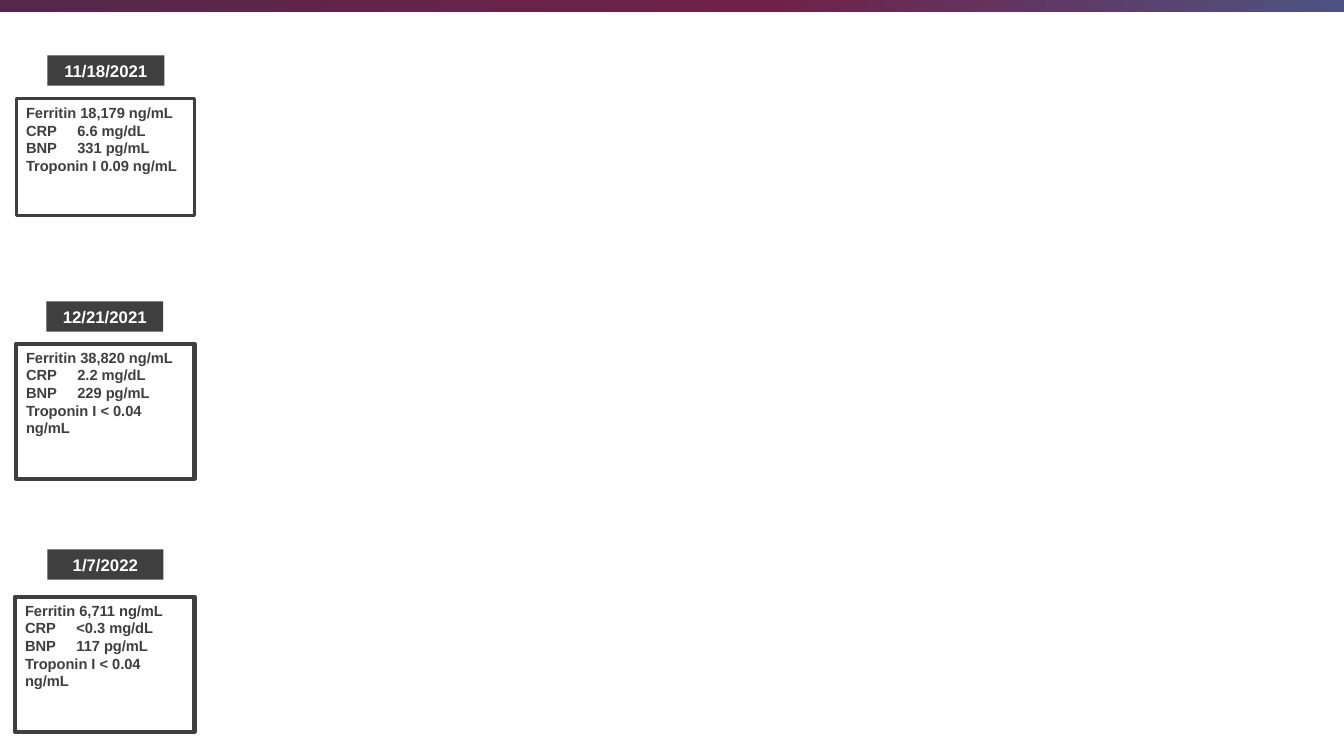
from copy import deepcopy
from dataclasses import dataclass

from lxml.etree import SubElement
from pptx import Presentation
from pptx.dml.color import RGBColor
from pptx.enum.shapes import MSO_SHAPE as SHAPE
from pptx.enum.text import MSO_ANCHOR as ANCHOR, PP_ALIGN as ALIGN
from pptx.oxml import parse_xml
from pptx.oxml.ns import nsdecls, qn
from pptx.shapes.autoshape import Shape
from pptx.slide import Slide
from pptx.util import Emu, Pt

PX = 9144  # 100 px to the inch
FONT = "Arial"
DARK = "3F3F3F"
WHITE = "FFFFFF"
BAND_STOPS = [(0, "54284B"), (57, "6F2147"), (100, "4D5282")]
VALUE_TAB = 51


@dataclass
class Box:
    left: int
    top: int
    width: int
    height: int


@dataclass
class LabPanel:
    date: str
    date_box: Box
    results: list[str]
    results_box: Box
    border: float


PANELS = [
    LabPanel("11/18/2021", Box(47, 55, 116, 30),
             ["Ferritin 18,179 ng/mL", "CRP\t6.6 mg/dL", "BNP\t331 pg/mL",
              "Troponin I 0.09 ng/mL"],
             Box(16, 98, 177, 116), 2.25),
    LabPanel("12/21/2021", Box(46, 299, 116, 30),
             ["Ferritin 38,820 ng/mL", "CRP\t2.2 mg/dL", "BNP\t229 pg/mL",
              "Troponin I < 0.04 ng/mL"],
             Box(16, 341, 177, 134), 3),
    LabPanel("1/7/2022", Box(47, 545, 115, 30),
             ["Ferritin 6,711 ng/mL", "CRP\t<0.3 mg/dL", "BNP\t117 pg/mL",
              "Troponin I < 0.04 ng/mL"],
             Box(15, 592, 178, 134), 3),
]


def px(n: int) -> Emu:
    return Emu(n * PX)


def rgb(color: str) -> RGBColor:
    return RGBColor.from_string(color)


def add_rect(s: Slide, box: Box) -> Shape:
    sp = s.shapes.add_shape(SHAPE.RECTANGLE, px(box.left), px(box.top),
                            px(box.width), px(box.height))
    sp.shadow.inherit = False
    sp.line.fill.background()
    return sp


def write(sp: Shape, lines: list[str], size: float, color: str,
          align: ALIGN) -> None:
    tf = sp.text_frame
    tf.word_wrap = True
    tf.vertical_anchor = ANCHOR.TOP
    for i, line in enumerate(lines):
        p = tf.add_paragraph() if i else tf.paragraphs[0]
        p.text = line
        p.alignment = align
        p.font.name = FONT
        p.font.size = Pt(size)
        p.font.bold = True
        p.font.color.rgb = rgb(color)
        # The tab stop lines up the values
        if "\t" in line:
            p._p.get_or_add_pPr().insert(0, parse_xml(
                f'<a:tabLst {nsdecls("a")}>'
                f'<a:tab pos="{px(VALUE_TAB)}" algn="l"/></a:tabLst>'))


def add_band(s: Slide, box: Box) -> None:
    sp = add_rect(s, box)
    sp.fill.gradient()
    sp.fill.gradient_angle = 0
    stops = sp.fill.gradient_stops
    stops[0]._gs.addnext(deepcopy(stops[0]._gs))
    for stop, (percent, color) in zip(sp.fill.gradient_stops, BAND_STOPS):
        stop.position = percent / 100
        stop.color.rgb = rgb(color)


def add_panel(s: Slide, panel: LabPanel) -> None:
    # Date label
    sp = add_rect(s, panel.date_box)
    sp.fill.solid()
    sp.fill.fore_color.rgb = rgb(DARK)
    write(sp, [panel.date], 12, WHITE, ALIGN.CENTER)

    # Lab results, framed with rounded corners
    sp = add_rect(s, panel.results_box)
    sp.fill.background()
    sp.line.color.rgb = rgb(DARK)
    sp.line.width = Pt(panel.border)
    SubElement(sp.line._get_or_add_ln(), qn("a:round"))
    write(sp, panel.results, 10.5, DARK, ALIGN.LEFT)


def main() -> None:
    prs = Presentation()
    prs.slide_width, prs.slide_height = px(1333), px(750)
    s = prs.slides.add_slide(prs.slide_layouts[6])
    add_band(s, Box(0, 0, 1333, 12))
    for panel in PANELS:
        add_panel(s, panel)
    prs.save("out.pptx")


if __name__ == "__main__":
    main()
